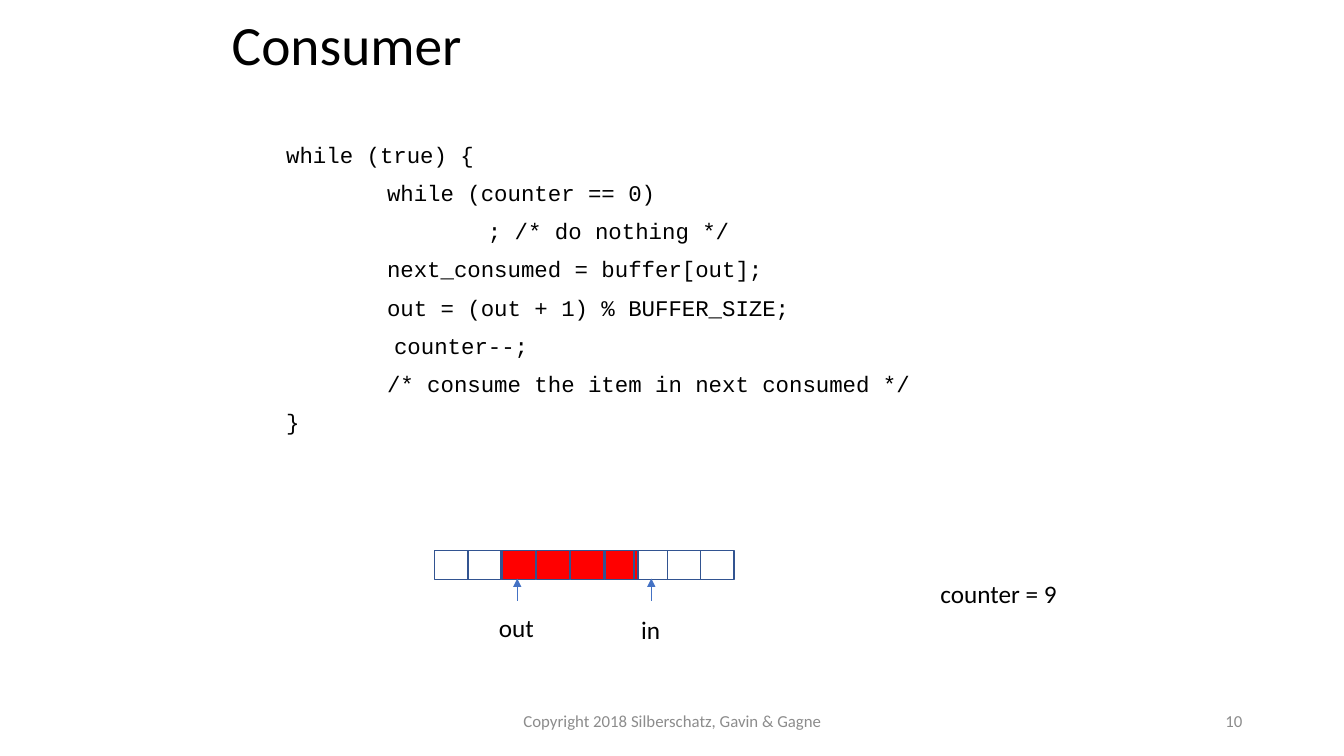
import dataclasses

import pptx
import pptx.dml.color
import pptx.enum.shapes
import pptx.enum.text
import pptx.oxml.ns
import pptx.util
from lxml import etree

Inches = pptx.util.Inches
Pt = pptx.util.Pt
RGB = pptx.dml.color.RGBColor
PP_ALIGN = pptx.enum.text.PP_ALIGN
ANCHOR = pptx.enum.text.MSO_ANCHOR
qn = pptx.oxml.ns.qn


@dataclasses.dataclass(frozen=True)
class Theme:
    text: RGB = RGB(0x00, 0x00, 0x00)
    muted: RGB = RGB(0x8C, 0x8C, 0x8C)
    occupied: RGB = RGB(0xFF, 0x00, 0x00)
    cell_border: RGB = RGB(0x32, 0x54, 0x91)
    pointer: RGB = RGB(0x44, 0x72, 0xC4)
    body_font: str = "Calibri"
    code_font: str = "Courier New"
    title_size: float = 39.6
    code_size: float = 16
    label_size: float = 18
    footer_size: float = 12


THEME = Theme()

CODE_LINES = [
    (0, "while (true) {"),
    (1, "while (counter == 0)"),
    (2, "; /* do nothing */"),
    (1, "next_consumed = buffer[out];"),
    (1, "out = (out + 1) % BUFFER_SIZE;"),
    (1.07, "counter--;"),
    (1, "/* consume the item in next consumed */"),
    (0, "}"),
]


def add_frame(slide, left, top, width, height, anchor=ANCHOR.TOP, wrap=True):
    box = slide.shapes.add_textbox(
        Inches(left), Inches(top), Inches(width), Inches(height))
    frame = box.text_frame
    frame.word_wrap = wrap
    frame.vertical_anchor = anchor
    return frame


def add_run(paragraph, text, size, color=THEME.text, font=THEME.body_font):
    run = paragraph.add_run()
    run.text = text
    run.font.name = font
    run.font.size = Pt(size)
    run.font.color.rgb = color


def add_title(slide, left, top, width, height):
    frame = add_frame(slide, left, top, width, height, ANCHOR.MIDDLE)
    heading = frame.paragraphs[0]
    heading.line_spacing = 0.9
    add_run(heading, "Consumer", THEME.title_size)


def add_code(slide, left, top, width, height):
    frame = add_frame(slide, left, top, width, height)
    for number, (indent, text) in enumerate(CODE_LINES):
        line = frame.add_paragraph() if number else frame.paragraphs[0]
        line.line_spacing = 0.9
        line.space_before = Pt(10)
        line._p.get_or_add_pPr().set("marL", str(Inches(indent)))
        add_run(line, text, THEME.code_size, font=THEME.code_font)


def add_label(slide, text, left, top, width):
    frame = add_frame(slide, left, top, width, 0.4, wrap=False)
    frame.auto_size = pptx.enum.text.MSO_AUTO_SIZE.SHAPE_TO_FIT_TEXT
    add_run(frame.paragraphs[0], text, THEME.label_size)


def add_cell(slide, left, top, width, height, occupied):
    cell = slide.shapes.add_shape(
        pptx.enum.shapes.MSO_SHAPE.RECTANGLE,
        Inches(left), Inches(top), Inches(width), Inches(height))
    cell.shadow.inherit = False
    if occupied:
        cell.fill.solid()
        cell.fill.fore_color.rgb = THEME.occupied
    else:
        cell.fill.background()
    cell.line.color.rgb = THEME.cell_border
    cell.line.width = Pt(1)


def add_pointer(slide, x, tail_y, tip_y):
    pointer = slide.shapes.add_connector(
        pptx.enum.shapes.MSO_CONNECTOR.STRAIGHT,
        Inches(x), Inches(tail_y), Inches(x), Inches(tip_y))
    pointer.line.color.rgb = THEME.pointer
    pointer.line.width = Pt(0.5)
    line_xml = pointer.line._get_or_add_ln()
    etree.SubElement(line_xml, qn("a:tailEnd"), type="triangle")
    etree.SubElement(pointer._element.spPr, qn("a:effectLst"))


def add_buffer(slide, left, top, cell_width, cell_height):
    occupied_slots = range(2, 6)
    for slot in range(9):
        occupied = slot in occupied_slots
        if occupied:
            offset = 0.67 + 0.34 * (slot - occupied_slots.start)
        else:
            offset = cell_width * slot
        add_cell(slide, left + offset, top, cell_width, cell_height, occupied)
    for x in (0.82, 2.15):
        add_pointer(slide, left + x, top + 0.5, top + 0.28)
    add_label(slide, "in", left + 1.95, top + 0.59, 0.39)
    add_label(slide, "out", left + 0.54, top + 0.57, 0.55)
    add_label(slide, "counter = 9", left + 4.92, top + 0.23, 1.37)


def add_footer(slide, left, top, height):
    parts = [
        ("Copyright 2018 Silberschatz, Gavin & Gagne", 0, 4.5, PP_ALIGN.CENTER),
        ("10", 5, 3, PP_ALIGN.RIGHT),
    ]
    for text, offset, width, alignment in parts:
        frame = add_frame(
            slide, left + offset, top, width, height, ANCHOR.MIDDLE)
        frame.paragraphs[0].alignment = alignment
        add_run(frame.paragraphs[0], text, THEME.footer_size, THEME.muted)


def main():
    deck = pptx.Presentation()
    deck.slide_width = Inches(13.33)
    deck.slide_height = Inches(7.5)
    slide = deck.slides.add_slide(deck.slide_layouts[6])
    add_title(slide, 2.2, 0.16, 9, 0.63)
    add_code(slide, 2.74, 1.38, 7.52, 5.32)
    add_footer(slide, 4.42, 6.95, 0.4)
    add_buffer(slide, 4.31, 5.46, 0.33, 0.29)
    deck.save("out.pptx")


if __name__ == "__main__":
    main()
